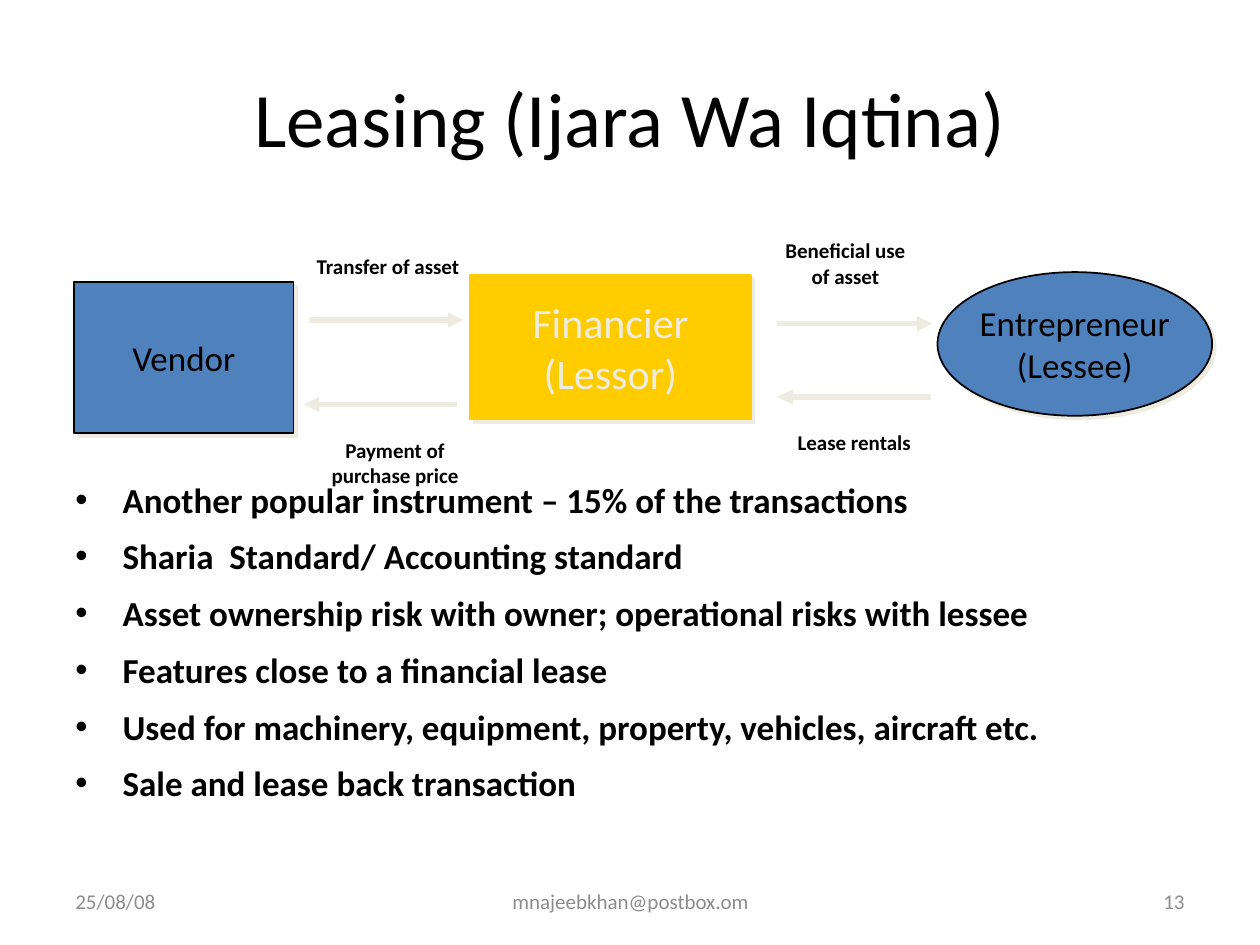
import pptx
import pptx.dml.color
import pptx.enum.shapes
import pptx.enum.text
import pptx.oxml.ns
import pptx.util
from lxml import etree

COLORS = {
    "black": "000000",
    "blue": "4F81BD",
    "gold": "FFCC00",
    "cream": "EEECE1",
    "gray": "8C8C8C",
}
ALIGN = pptx.enum.text.PP_ALIGN
ANCHOR = pptx.enum.text.MSO_ANCHOR
SHAPE = pptx.enum.shapes.MSO_SHAPE


def color(name):
    return pptx.dml.color.RGBColor.from_string(COLORS[name])


def add_xml(parent, tag, **attributes):
    return etree.SubElement(parent, pptx.oxml.ns.qn(tag), attributes)


class SlideBuilder:
    """Style and current slide; lengths are cells of a 100 by 75 grid."""

    font = "Calibri"
    columns = 100

    def __init__(self, presentation):
        self.cell = presentation.slide_width / self.columns
        self.slide = presentation.slides.add_slide(presentation.slide_layouts[6])

    def grid(self, *cells):
        return [pptx.util.Emu(round(cell * self.cell)) for cell in cells]

    def fill_text(self, shape, lines, size, ink="black", bold=False,
                  align=ALIGN.CENTER, anchor=ANCHOR.MIDDLE, wrap=False):
        frame = shape.text_frame
        frame.word_wrap = wrap
        frame.vertical_anchor = anchor
        for index, line in enumerate(lines):
            paragraph = frame.paragraphs[0] if index == 0 else frame.add_paragraph()
            paragraph.alignment = align
            run = paragraph.add_run()
            run.text = line
            run.font.name = self.font
            run.font.size = pptx.util.Pt(size)
            run.font.bold = bold
            run.font.color.rgb = color(ink)
        return frame.paragraphs

    def text(self, box, lines, size, **style):
        shape = self.slide.shapes.add_textbox(*self.grid(*box))
        return self.fill_text(shape, lines, size, **style)

    def label(self, box, *lines):
        self.text(box, lines, 12, bold=True, anchor=ANCHOR.TOP)

    def bullets(self, box, lines, size):
        indent = self.grid(3.75)[0]
        for paragraph in self.text(box, lines, size, bold=True, align=ALIGN.LEFT,
                                   anchor=ANCHOR.TOP, wrap=True):
            paragraph.line_spacing = 1.2
            paragraph.space_before = pptx.util.Pt(size * 0.18)
            properties = paragraph._p.get_or_add_pPr()
            properties.set("marL", str(indent))
            properties.set("indent", str(-indent))
            add_xml(properties, "a:buFont", typeface="Arial")
            add_xml(properties, "a:buChar", char="•")

    def party(self, kind, box, lines, size, fill, line="black", ink="black"):
        shape = self.slide.shapes.add_shape(kind, *self.grid(*box))
        shape.fill.solid()
        shape.fill.fore_color.rgb = color(fill)
        shape.line.color.rgb = color(line)
        shape.line.width = pptx.util.Pt(1)
        shape.shadow.inherit = False
        effects = shape._element.spPr.find(pptx.oxml.ns.qn("a:effectLst"))
        shadow = add_xml(effects, "a:outerShdw", dist=str(pptx.util.Pt(2.8)),
                         dir=str(45 * 60000), algn="ctr", rotWithShape="0")
        add_xml(shadow, "a:srgbClr", val=COLORS["cream"])
        self.fill_text(shape, lines, size, ink=ink)

    def arrow(self, start, end, row):
        connector = self.slide.shapes.add_connector(
            pptx.enum.shapes.MSO_CONNECTOR.STRAIGHT,
            *self.grid(start, row, end, row))
        connector.line.color.rgb = color("cream")
        connector.line.width = pptx.util.Pt(3)
        add_xml(connector.line._get_or_add_ln(), "a:tailEnd", type="triangle")
        add_xml(connector._element.spPr, "a:effectLst")


def main():
    presentation = pptx.Presentation()
    presentation.slide_width = pptx.util.Inches(10)
    presentation.slide_height = pptx.util.Inches(7.5)
    builder = SlideBuilder(presentation)

    # Title and key points
    builder.text((5, 3, 90, 12.5), ["Leasing (Ijara Wa Iqtina)"], 44, wrap=True)
    builder.bullets((5, 36.8, 90, 30.2), [
        "Another popular instrument – 15% of the transactions",
        "Sharia  Standard/ Accounting standard",
        "Asset ownership risk with owner; operational risks with lessee",
        "Features close to a financial lease",
        "Used for machinery, equipment, property, vehicles, aircraft etc.",
        "Sale and lease back transaction",
    ], 20)

    # Parties to the lease
    builder.party(SHAPE.RECTANGLE, (5.9, 22.4, 17.4, 12), ["Vendor"], 20, "blue")
    builder.party(SHAPE.RECTANGLE, (37.3, 21.8, 22.3, 11.5),
                  ["Financier", "(Lessor)"], 24, "gold", line="gold", ink="cream")
    builder.party(SHAPE.OVAL, (74.4, 21.6, 21.8, 11.4),
                  ["Entrepreneur", "(Lessee)"], 20, "blue")

    # Flows between the parties
    for start, end, row in [(24.5, 36.8, 25.4), (36.3, 24.1, 32.1),
                            (61.7, 74, 25.7), (73.9, 61.7, 31.5)]:
        builder.arrow(start, end, row)
    builder.label((23.1, 19.6, 15.4, 3), "Transfer of asset")
    builder.label((24.4, 34.2, 13.9, 5), "Payment of", "purchase price")
    builder.label((60.5, 18.4, 13.2, 5), "Beneficial use", "of asset")
    builder.label((61.5, 33.6, 12.6, 3), "Lease rentals")

    # Footer
    for left, width, line, align in [
            (5, 23.3, "25/08/08", ALIGN.LEFT),
            (34.2, 31.7, "mnajeebkhan@postbox.om", ALIGN.CENTER),
            (71.7, 23.3, "13", ALIGN.RIGHT)]:
        builder.text((left, 69.5, width, 4), [line], 12, ink="gray",
                     align=align, wrap=True)

    presentation.save("out.pptx")


if __name__ == "__main__":
    main()
